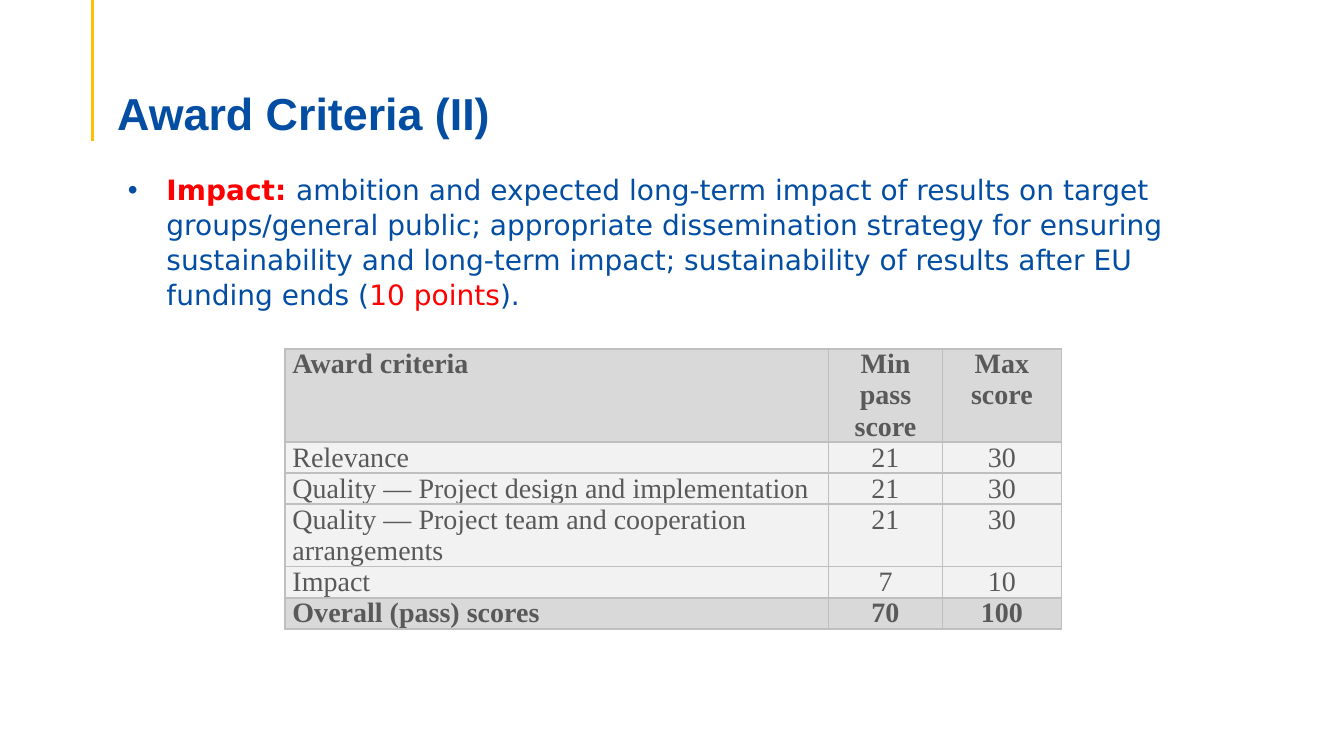
from lxml.etree import SubElement
from pptx import Presentation
from pptx.dml.color import RGBColor
from pptx.enum.shapes import MSO_CONNECTOR
from pptx.enum.text import MSO_ANCHOR, MSO_AUTO_SIZE, PP_ALIGN
from pptx.oxml.ns import qn
from pptx.util import Cm, Pt

COLORS = {
    "blue": "034EA2",
    "red": "FF0000",
    "accent": "FFC000",
    "table_text": "595959",
    "border": "BFBFBF",
    "strong_row": "D9D9D9",
    "plain_row": "F2F2F2",
}


def style_font(font, name, size, color, bold=False):
    font.name = name
    font.size = Pt(size)
    font.bold = bold
    font.color.rgb = RGBColor.from_string(COLORS[color])


def add_cell_borders(cell):
    properties = cell._tc.get_or_add_tcPr()
    for side in ("a:lnL", "a:lnR", "a:lnT", "a:lnB"):
        border = SubElement(properties, qn(side), w=str(Pt(1.5)))
        fill = SubElement(border, qn("a:solidFill"))
        SubElement(fill, qn("a:srgbClr"), val=COLORS["border"])


presentation = Presentation()
presentation.slide_width = Cm(33.87)
presentation.slide_height = Cm(19.05)
slide = presentation.slides.add_slide(presentation.slide_layouts[1])

# Accent line beside the title
accent = slide.shapes.add_connector(
    MSO_CONNECTOR.STRAIGHT, Cm(2.34), Cm(0), Cm(2.34), Cm(3.56))
accent.line.color.rgb = RGBColor.from_string(COLORS["accent"])
accent.line.width = Pt(2.25)
SubElement(accent._element.spPr, qn("a:effectLst"))

# Title
title = slide.shapes.title
title.left, title.top, title.width, title.height = Cm(2.7), Cm(1.35), Cm(29.21), Cm(2.18)
title_frame = title.text_frame
title_frame.text = "Award Criteria (II)"
title_frame.vertical_anchor = MSO_ANCHOR.BOTTOM
title_frame.auto_size = MSO_AUTO_SIZE.NONE
title_frame.margin_bottom = 0
heading = title_frame.paragraphs[0]
heading.alignment = PP_ALIGN.LEFT
heading.line_spacing = 0.9
style_font(heading.runs[0].font, "Arial", 32, "blue", bold=True)

# Impact criterion
body = slide.placeholders[1]
body.left, body.top, body.width, body.height = Cm(2.97), Cm(4.19), Cm(27.97), Cm(3.81)
body.text_frame.auto_size = MSO_AUTO_SIZE.NONE
criterion = body.text_frame.paragraphs[0]
bullet_properties = criterion._p.get_or_add_pPr()
bullet_properties.set("marL", str(Cm(0.97)))
bullet_properties.set("indent", str(-Cm(0.97)))
bullet_color = SubElement(bullet_properties, qn("a:buClr"))
SubElement(bullet_color, qn("a:srgbClr"), val=COLORS["blue"])
SubElement(bullet_properties, qn("a:buFont"), typeface="Arial")
SubElement(bullet_properties, qn("a:buChar"), char="•")
criterion.space_before = Pt(0)
criterion.space_after = Pt(18)
criterion.line_spacing = 1.04
for wording, color, bold in [
    ("Impact: ", "red", True),
    ("ambition and expected long-term impact of results on target groups/general public; "
     "appropriate dissemination strategy for ensuring sustainability and long-term impact; "
     "sustainability of results after EU funding ends (", "blue", False),
    ("10 points", "red", False),
    (").", "blue", False),
]:
    run = criterion.add_run()
    run.text = wording
    style_font(run.font, "DejaVu Sans", 20, color, bold)

# Score table: row height follows the number of text lines
LINE_HEIGHT = 0.78
scores = [
    (3, "Award criteria", "Min pass score", "Max score"),
    (1, "Relevance", "21", "30"),
    (1, "Quality — Project design and implementation", "21", "30"),
    (2, "Quality — Project team and cooperation arrangements", "21", "30"),
    (1, "Impact", "7", "10"),
    (1, "Overall (pass) scores", "70", "100"),
]
column_widths = [13.69, 2.87, 3]
total_lines = sum(row[0] for row in scores)
table = slide.shapes.add_table(
    len(scores), len(column_widths), Cm(7.19), Cm(8.79),
    Cm(sum(column_widths)), Cm(total_lines * LINE_HEIGHT)).table
for column, width in zip(table.columns, column_widths):
    column.width = Cm(width)

for row_index, (line_count, *entries) in enumerate(scores):
    table.rows[row_index].height = Cm(line_count * LINE_HEIGHT)
    strong = row_index in (0, len(scores) - 1)
    for column_index, entry in enumerate(entries):
        cell = table.cell(row_index, column_index)
        cell.margin_left = cell.margin_right = Cm(0.18)
        cell.margin_top = cell.margin_bottom = 0
        add_cell_borders(cell)
        cell.fill.solid()
        cell.fill.fore_color.rgb = RGBColor.from_string(
            COLORS["strong_row" if strong else "plain_row"])
        cell.text_frame.text = entry
        paragraph = cell.text_frame.paragraphs[0]
        paragraph.alignment = PP_ALIGN.CENTER if column_index else PP_ALIGN.LEFT
        style_font(paragraph.runs[0].font, "Times New Roman", 20, "table_text", strong)

presentation.save("out.pptx")
